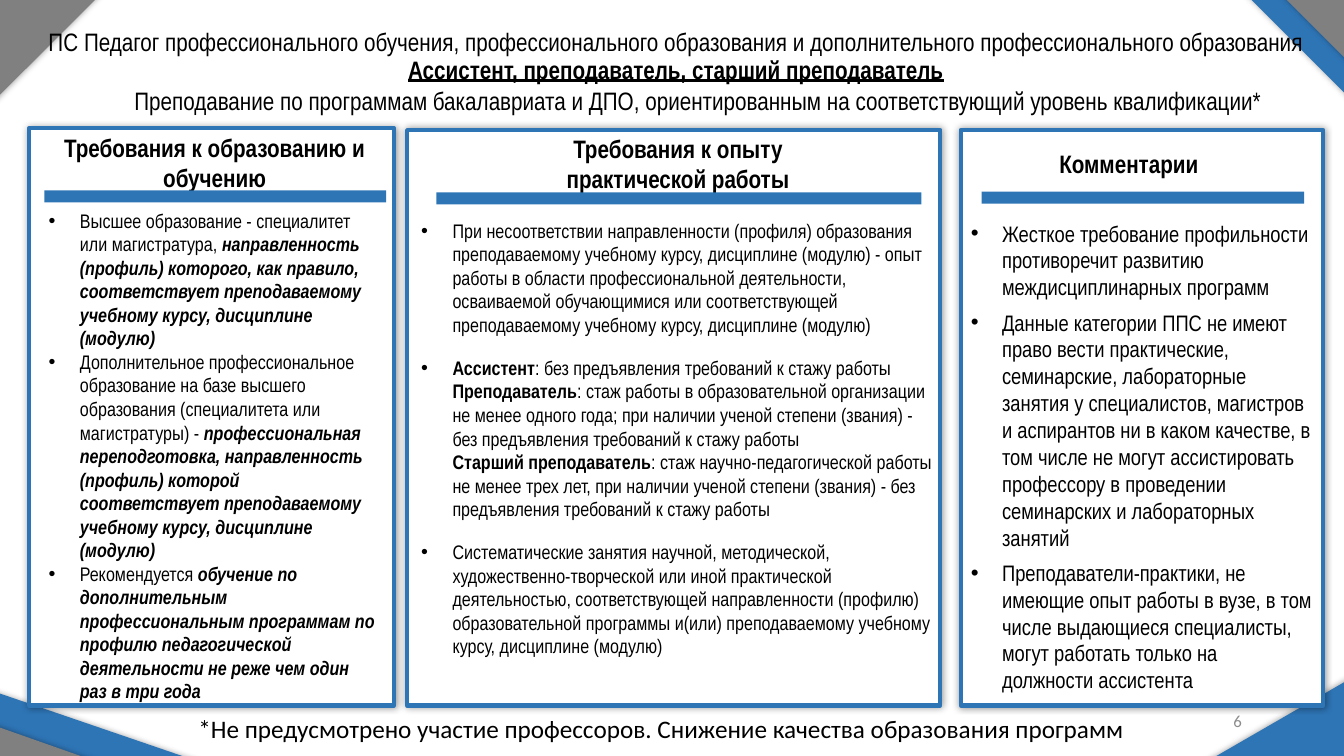
import pptx
import pptx.dml.color
import pptx.enum.shapes
import pptx.enum.text
import pptx.oxml.ns
import pptx.util
from lxml import etree

Cm = pptx.util.Cm
Pt = pptx.util.Pt
qn = pptx.oxml.ns.qn
ALIGN = pptx.enum.text.PP_ALIGN
ANCHOR = pptx.enum.text.MSO_ANCHOR
COLOURS = {"blue": "2E75B6", "grey": "808080", "white": "FFFFFF",
           "black": "000000", "number": "8C8C8C"}


def write(box, place, lines, size=18, font="Arial Narrow", colour="black", bold=False,
          accent=None, align=ALIGN.LEFT, anchor=ANCHOR.TOP, wrap=True, bullet=False,
          spacing=1.0, before=0, after=0):
    box.left, box.top, box.width, box.height = [Cm(length) for length in place]
    frame = box.text_frame
    frame.auto_size = pptx.enum.text.MSO_AUTO_SIZE.NONE
    frame.word_wrap = wrap
    frame.vertical_anchor = anchor
    for index, line in enumerate(lines):
        para = frame.add_paragraph() if index else frame.paragraphs[0]
        para.alignment = align
        para.line_spacing = spacing
        para.space_before = Pt(before if index else 0)
        para.space_after = Pt(after)
        if bullet:
            settings = para._p.get_or_add_pPr()
            settings.set("marL", str(Cm(0.79)))
            settings.set("indent", str(-Cm(0.79)))
            etree.SubElement(settings, qn("a:buFont"), typeface="Arial")
            etree.SubElement(settings, qn("a:buChar"), char="•")
        for row, part in enumerate(line.split("\n")):
            if row:
                para.add_line_break()
            for order, piece in enumerate(part.split("|")):
                if not piece:
                    continue
                stressed = order % 2 == 1
                span = para.add_run()
                span.text = piece
                span.font.name = font
                span.font.size = Pt(size)
                span.font.color.rgb = pptx.dml.color.RGBColor.from_string(COLOURS[colour])
                span.font.bold = bold or stressed
                span.font.italic = stressed and accent == "italic"
                span.font.underline = stressed and accent == "underline"


def draw_rectangle(place, colour, outline=None, rotation=0, shadow=True):
    shape = page.shapes.add_shape(pptx.enum.shapes.MSO_SHAPE.RECTANGLE,
                                  *[Cm(length) for length in place])
    shape.rotation = rotation
    shape.fill.solid()
    shape.fill.fore_color.rgb = pptx.dml.color.RGBColor.from_string(COLOURS[colour])
    if outline:
        shape.line.color.rgb = pptx.dml.color.RGBColor.from_string(COLOURS[outline])
        shape.line.width = Pt(3)
    else:
        shape.line.fill.background()
    shape.shadow.inherit = False
    if shadow:
        effects = shape._element.spPr.find(qn("a:effectLst"))
        outer = etree.SubElement(effects, qn("a:outerShdw"), blurRad=str(Pt(5)),
                                 dist="0", dir="0", algn="ctr", rotWithShape="0")
        tint = etree.SubElement(outer, qn("a:srgbClr"), val=COLOURS["black"])
        etree.SubElement(tint, qn("a:alpha"), val="40000")


deck = pptx.Presentation()
deck.slide_width = Cm(33.87)
deck.slide_height = Cm(19.05)
page = deck.slides.add_slide(deck.slide_layouts.get_by_name("Comparison"))
holders = {holder.placeholder_format.idx: holder for holder in page.placeholders}
tree = page.shapes._spTree
tree.remove(holders[1]._element)

corners = [
    ((27.08, -2.26, 15.39, 4.55), "blue", 45),
    ((-4.37, 18.92, 16.81, 2.13), "blue", 18.9),
    ((-1.7, -0.56, 4.52, 1.98), "grey", 315),
    ((30.33, 18.11, 4.65, 2.77), "blue", 330),
    ((26.95, -0.66, 16.81, 2.97), "grey", 45),
    ((-5.46, 19.46, 16.81, 2.97), "grey", 19.4),
]
for place, colour, rotation in corners:
    draw_rectangle(place, colour, rotation=rotation)

title = page.shapes.title
tree.append(title._element)
write(title, (0.74, 0.66, 32.59, 1.6), [
    "ПС Педагог профессионального обучения, профессионального образования и дополнительного профессионального образования",
    "|Ассистент, преподаватель, старший преподаватель|",
], accent="underline", align=ALIGN.CENTER, anchor=ANCHOR.BOTTOM, spacing=0.9)

columns = [
    {
        "panel": (0.74, 3.23, 9.19, 14.55),
        "bar": (1.12, 4.8, 8.61, 0.3),
        "heading": ((1.09, 3.2, 8.64, 1.73), ["Требования к образованию и обучению"]),
        "holder": 2,
        "place": (0.97, 5.13, 8.76, 12.37),
        "lines": [
            "Высшее образование - специалитет или магистратура, |направленность (профиль) которого, как правило, соответствует преподаваемому учебному курсу, дисциплине (модулю)|",
            "Дополнительное профессиональное образование на базе высшего образования (специалитета или магистратуры) - |профессиональная переподготовка, направленность (профиль) которой соответствует преподаваемому учебному курсу, дисциплине (модулю)|",
            "Рекомендуется |обучение по дополнительным профессиональным программам по профилю педагогической деятельности не реже чем один раз в три года|",
        ],
        "format": {"size": 14, "accent": "italic"},
    },
    {
        "panel": (10.26, 3.28, 13.44, 14.5),
        "bar": (11, 4.85, 12.22, 0.3),
        "heading": ((10.97, 3.23, 12.24, 1.73), ["Требования к опыту", "практической работы"]),
        "holder": 4,
        "place": (10.36, 5.38, 13.39, 12.29),
        "lines": [
            "При несоответствии направленности (профиля) образования преподаваемому учебному курсу, дисциплине (модулю) - опыт работы в области профессиональной деятельности, осваиваемой обучающимися или соответствующей преподаваемому учебному курсу, дисциплине (модулю)",
            "|Ассистент|: без предъявления требований к стажу работы\n"
            "|Преподаватель|: стаж работы в образовательной организации не менее одного года; при наличии ученой степени (звания) - без предъявления требований к стажу работы\n"
            "|Старший преподаватель|: стаж научно-педагогической работы не менее трех лет, при наличии ученой степени (звания) - без предъявления требований к стажу работы",
            "Систематические занятия научной, методической, художественно-творческой или иной практической деятельностью, соответствующей направленности (профилю) образовательной программы и(или) преподаваемому учебному курсу, дисциплине (модулю)",
        ],
        "format": {"size": 14, "before": 14},
    },
    {
        "panel": (24.21, 3.28, 9.14, 14.5),
        "bar": (24.74, 4.83, 8.13, 0.3),
        "heading": ((26.42, 3.61, 4.06, 0.97), ["Комментарии"]),
        "holder": 3,
        "place": (24.21, 5.41, 9.14, 12.32),
        "lines": [
            "Жесткое требование профильности противоречит развитию междисциплинарных программ",
            "Данные категории ППС не имеют право вести практические, семинарские, лабораторные занятия у специалистов, магистров и аспирантов ни в каком качестве, в том числе не могут ассистировать профессору в проведении семинарских и лабораторных занятий",
            "Преподаватели-практики, не имеющие опыт работы в вузе, в том числе выдающиеся специалисты, могут работать только на должности ассистента",
        ],
        "format": {"size": 16, "after": 6},
    },
]
for column in columns:
    draw_rectangle(column["panel"], "white", outline="blue")
    place, lines = column["heading"]
    write(page.shapes.add_textbox(0, 0, 0, 0), place, lines, bold=True,
          align=ALIGN.CENTER)
    holder = holders[column["holder"]]
    tree.append(holder._element)
    write(holder, column["place"], column["lines"], bullet=True, **column["format"])
    draw_rectangle(column["bar"], "blue", shadow=False)

notices = [
    ((23.93, 17.65, 7.62, 1.02), "6",
     {"size": 12, "font": "Calibri", "colour": "number", "align": ALIGN.RIGHT,
      "anchor": ANCHOR.MIDDLE}),
    ((1.83, 2.03, 31.52, 1.02),
     "Преподавание по программам бакалавриата и ДПО, ориентированным на соответствующий уровень квалификации*",
     {"align": ALIGN.CENTER}),
    ((4.75, 17.86, 24.05, 1.02),
     "*Не предусмотрено участие профессоров. Снижение качества образования программ",
     {"font": "Calibri", "wrap": False}),
]
for place, text, style in notices:
    write(page.shapes.add_textbox(0, 0, 0, 0), place, [text], **style)

deck.save("out.pptx")
